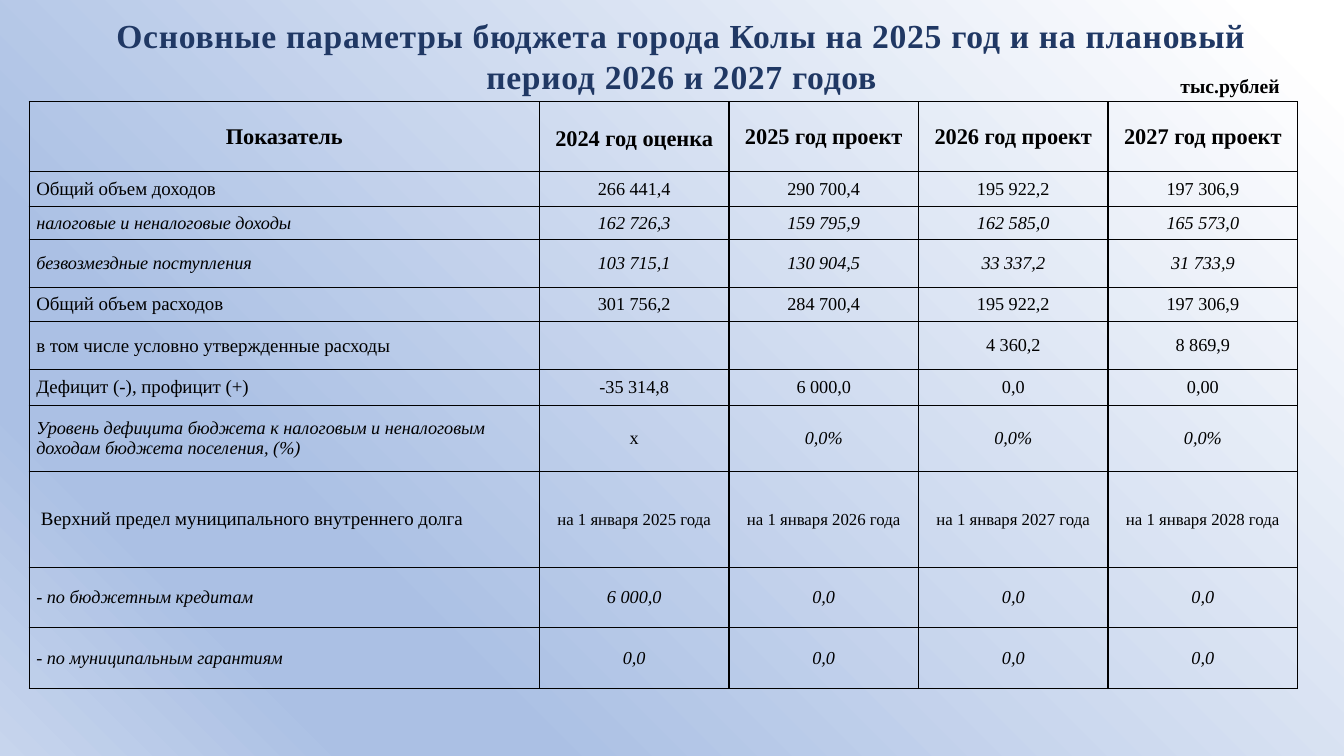
from copy import deepcopy

from lxml import etree
from pptx import Presentation
from pptx.dml.color import RGBColor
from pptx.enum import text as tx
from pptx.oxml import ns
from pptx.util import Inches, Pt

FACE = "Times New Roman"
BLACK = "000000"
NAVY = "203864"
BACKDROP = [(0.04, "FFFFFF"), (0.74, "ABC0E4"), (0.83, "ABC0E4"), (1, "C7D5ED")]
COLUMN_WIDTHS = [5.06] + [1.88] * 4
HEADER = (0.69, ["Показатель", "2024 год оценка", "2025 год проект",
                 "2026 год проект", "2027 год проект"])
DEBT = " Верхний предел муниципального внутреннего долга"
# Height, italic, label and yearly values
BUDGET = [
    (0.35, False, ["Общий объем доходов", "266 441,4", "290 700,4", "195 922,2", "197 306,9"]),
    (0.33, True, ["налоговые и неналоговые доходы",
                  "162 726,3", "159 795,9", "162 585,0", "165 573,0"]),
    (0.47, True, ["безвозмездные поступления",
                  "103 715,1", "130 904,5", "33 337,2", "31 733,9"]),
    (0.34, False, ["Общий объем расходов", "301 756,2", "284 700,4", "195 922,2", "197 306,9"]),
    (0.48, False, ["в том числе условно утвержденные расходы", "", "", "4 360,2", "8 869,9"]),
    (0.35, False, ["Дефицит (-), профицит (+)", "-35 314,8", "6 000,0", "0,0", "0,00"]),
    (0.66, True, ["Уровень дефицита бюджета к налоговым и неналоговым "
                  "доходам бюджета поселения, (%)", "х", "0,0%", "0,0%", "0,0%"]),
    (0.95, False, [DEBT] + [f"на 1 января {year} года" for year in range(2025, 2029)]),
    (0.6, True, ["- по бюджетным кредитам", "6 000,0", "0,0", "0,0", "0,0"]),
    (0.6, True, ["- по муниципальным гарантиям"] + ["0,0"] * 4),
]


def rgb(hex_color):
    return RGBColor.from_string(hex_color)


def write(frame, words, size, color=BLACK, align=tx.PP_ALIGN.CENTER, **styles):
    paragraph = frame.paragraphs[0]
    paragraph.alignment = align
    run = paragraph.add_run()
    run.text = words
    font_format = {"name": FACE, "size": Pt(size), **styles}
    for attribute, value in font_format.items():
        setattr(run.font, attribute, value)
    run.font.color.rgb = rgb(color)
    return run


def paint_background(slide):
    fill = slide.background.fill
    fill.gradient()
    fill.gradient_angle = 225
    stop_list = slide.element.find(".//" + ns.qn("a:gsLst"))
    while len(stop_list) < len(BACKDROP):
        stop_list.append(deepcopy(stop_list[0]))
    for stop, (position, color) in zip(fill.gradient_stops, BACKDROP):
        stop.position = position
        stop.color.rgb = rgb(color)


def add_heading(slide):
    heading = slide.shapes.title
    place = {"left": 0.48, "top": 0.09, "width": 12.56, "height": 0.92}
    for attribute, value in place.items():
        setattr(heading, attribute, Inches(value))
    frame = heading.text_frame
    frame.auto_size = tx.MSO_AUTO_SIZE.NONE
    frame.vertical_anchor = tx.MSO_ANCHOR.MIDDLE
    run = write(frame, "Основные параметры бюджета города Колы на 2025 год "
                "и на плановый период 2026 и 2027 годов", 24, NAVY, bold=True)
    run.font._element.set("spc", "50")


def add_unit_note(slide):
    note = slide.shapes.add_textbox(Inches(11.61), Inches(0.68), Inches(1.24), Inches(0.34))
    note.text_frame.word_wrap = True
    write(note.text_frame, "тыс.рублей", 14, align=tx.PP_ALIGN.LEFT, bold=True)


def format_cell(cell):
    cell.fill.background()
    layout = {"vertical_anchor": tx.MSO_ANCHOR.MIDDLE, "margin_left": Inches(0.07),
              "margin_right": Inches(0.07), "margin_top": 0, "margin_bottom": 0}
    for attribute, value in layout.items():
        setattr(cell, attribute, value)
    # Borders come before the fill in the cell properties
    properties = cell._tc.get_or_add_tcPr()
    for index, side in enumerate("LRTB"):
        border = etree.Element(ns.qn(f"a:ln{side}"), w=str(Pt(1)))
        solid = etree.SubElement(border, ns.qn("a:solidFill"))
        etree.SubElement(solid, ns.qn("a:srgbClr"), val=BLACK)
        properties.insert(index, border)


def fill_row(table, index, height, entries, styles_for):
    table.rows[index].height = Inches(height)
    for column, words in enumerate(entries):
        cell = table.cell(index, column)
        format_cell(cell)
        if words:
            write(cell.text_frame, words, **styles_for(column, words))


def add_budget_table(slide):
    total_height = HEADER[0] + sum(height for height, _, _ in BUDGET)
    table = slide.shapes.add_table(
        len(BUDGET) + 1, len(COLUMN_WIDTHS), Inches(0.29), Inches(1.01),
        Inches(sum(COLUMN_WIDTHS)), Inches(total_height)).table
    table.horz_banding = False
    table.first_row = False
    for column, width in zip(table.columns, COLUMN_WIDTHS):
        column.width = Inches(width)

    fill_row(table, 0, *HEADER, lambda column, words: {"size": 16, "bold": True})
    table.cell(0, 1).margin_top = Inches(0.04)

    for index, (height, italic, entries) in enumerate(BUDGET, start=1):
        def styles_for(column, words):
            if column == 0:
                return {"size": 13 if italic else 13.5, "italic": italic, "bold": False,
                        "align": tx.PP_ALIGN.LEFT}
            return {"size": 12 if entries[0] == DEBT else 13,
                    "italic": italic and words != "х", "bold": False}
        fill_row(table, index, height, entries, styles_for)


def main():
    deck = Presentation()
    deck.slide_width, deck.slide_height = Inches(13.33), Inches(7.5)
    slide = deck.slides.add_slide(deck.slide_layouts[5])
    paint_background(slide)
    add_heading(slide)
    add_unit_note(slide)
    add_budget_table(slide)
    deck.save("out.pptx")


if __name__ == "__main__":
    main()
